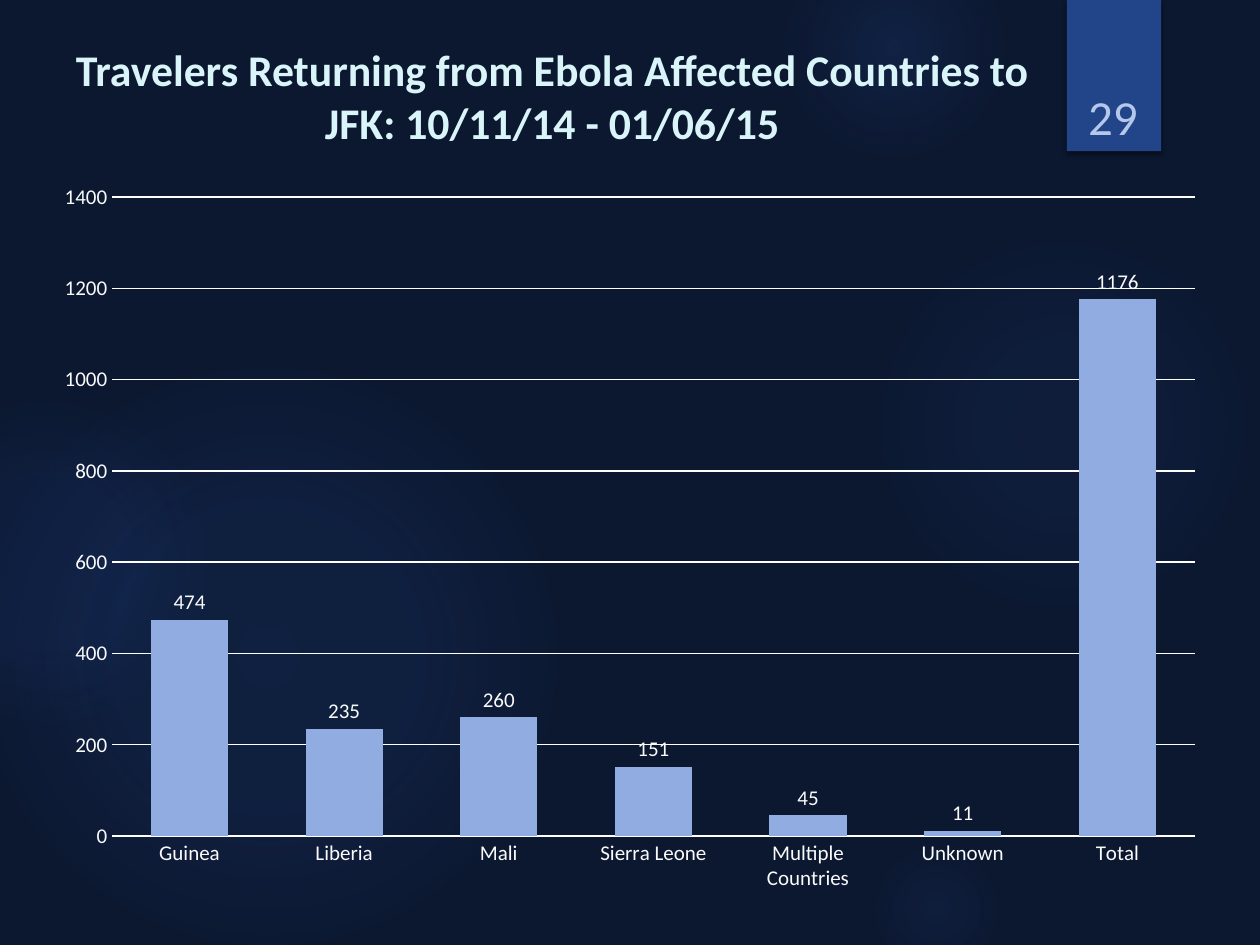
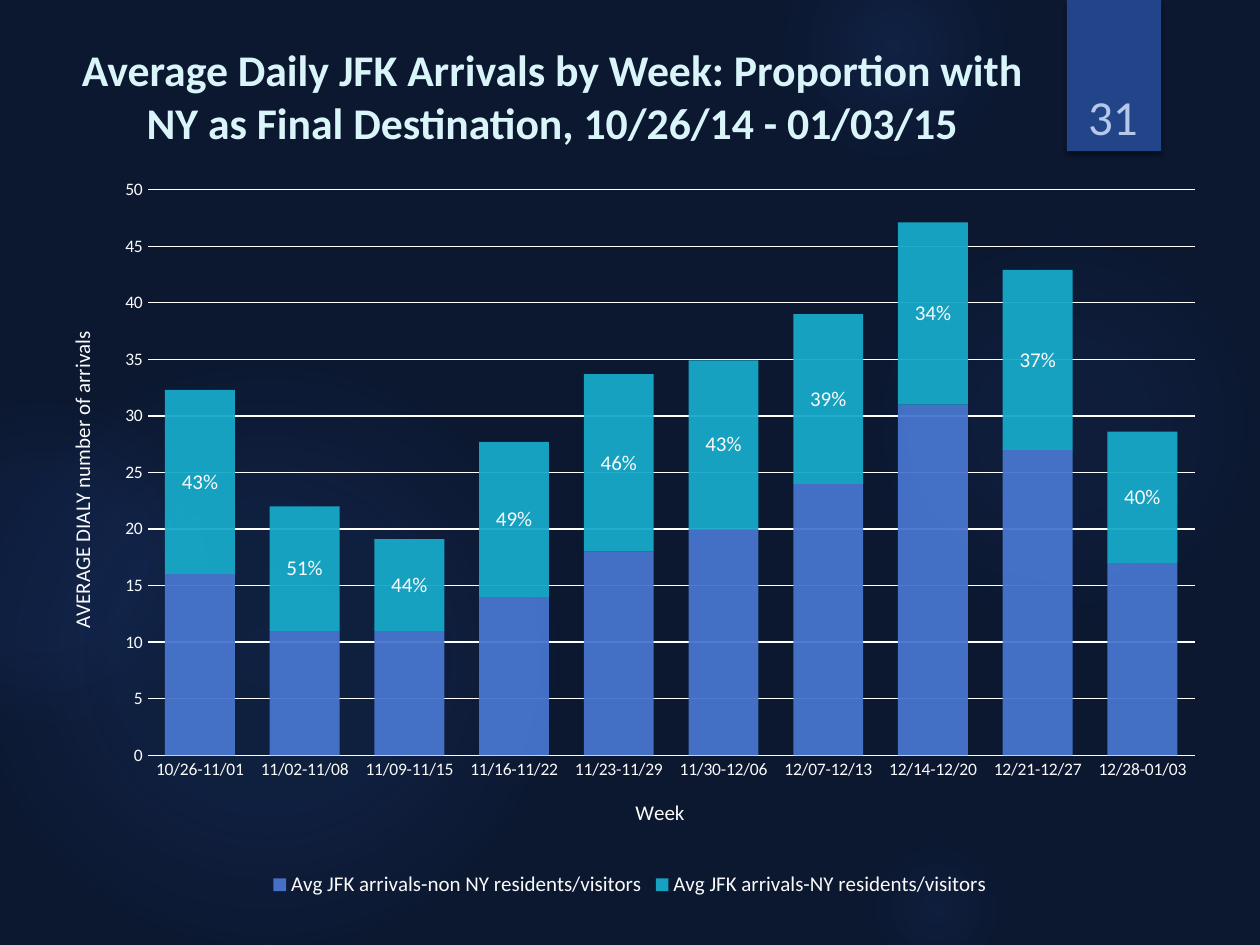
from dataclasses import dataclass

from lxml import etree
from pptx import Presentation
from pptx.chart.data import CategoryChartData
from pptx.dml.color import RGBColor
from pptx.enum.chart import XL_CHART_TYPE, XL_LABEL_POSITION, XL_LEGEND_POSITION, XL_TICK_MARK
from pptx.enum.shapes import MSO_SHAPE
from pptx.enum.text import MSO_ANCHOR, PP_ALIGN
from pptx.oxml import parse_xml
from pptx.oxml.ns import nsdecls, qn
from pptx.util import Cm, Pt

CLUSTERED = XL_CHART_TYPE.COLUMN_CLUSTERED
STACKED = XL_CHART_TYPE.COLUMN_STACKED
OUTSIDE_END = XL_LABEL_POSITION.OUTSIDE_END
LABEL_CENTER = XL_LABEL_POSITION.CENTER
LEGEND_BOTTOM = XL_LEGEND_POSITION.BOTTOM
NO_TICK = XL_TICK_MARK.NONE
OVAL, RECTANGLE = MSO_SHAPE.OVAL, MSO_SHAPE.RECTANGLE
TOP, BOTTOM = MSO_ANCHOR.TOP, MSO_ANCHOR.BOTTOM
CENTER = PP_ALIGN.CENTER


@dataclass(frozen=True)
class Theme:
    font: str = "Calibri"
    background: str = "0C1830"
    glow: str = "3060C0"
    tab: str = "22458A"
    number: str = "B5C8EB"
    title: str = "DAF5FA"
    text: str = "FAFAFA"
    grid: str = "FEFEFE"
    total_bars: str = "91ACE1"
    other_bars: str = "4775CD"
    ny_bars: str = "18A9C8"
    title_size: int = 25
    number_size: int = 28
    label_size: int = 12
    small_size: int = 10


@dataclass(frozen=True)
class Box:
    x: float
    y: float
    w: float
    h: float

    def inner(self, dx, dy, w, h):
        return Box(self.x + dx, self.y + dy, w, h)

    def lengths(self):
        return Cm(self.x), Cm(self.y), Cm(self.w), Cm(self.h)


THEME = Theme()
PAGE = Box(0, 0, 25.4, 19.05)
CHART_BOX = PAGE.inner(0.84, 3.38, 23.72, 14.81)
TAB_BOX = PAGE.inner(21.51, 0, 1.9, 3.05)

GLOWS = [
    (17.5, 4.65, 7.82, [(0, 7), (36, 6), (69, 0)]),
    (15.8, -1.27, 4.45, [(0, 14), (36, 7), (73, 0)]),
    (17.5, 16.94, 2.74, [(0, 9), (36, 5), (66, 0)]),
    (-0.43, 7.42, 11.63, [(0, 11), (36, 10), (75, 0)]),
    (-2.34, 8.05, 6.55, [(0, 8), (36, 8), (72, 0)]),
]

COUNTRY_COUNTS = {
    "Guinea": 474, "Liberia": 235, "Mali": 260, "Sierra Leone": 151,
    "Multiple Countries": 45, "Unknown": 11, "Total": 1176,
}

WEEKS = [
    ("10/26-11/01", 16, 16.3, "43%"),
    ("11/02-11/08", 11, 11, "51%"),
    ("11/09-11/15", 11, 8.1, "44%"),
    ("11/16-11/22", 14, 13.7, "49%"),
    ("11/23-11/29", 18, 15.7, "46%"),
    ("11/30-12/06", 20, 14.9, "43%"),
    ("12/07-12/13", 24, 15, "39%"),
    ("12/14-12/20", 31, 16.1, "34%"),
    ("12/21-12/27", 27, 15.9, "37%"),
    ("12/28-01/03", 17, 11.6, "40%"),
]


def style_font(font, size, color, bold=False):
    font.name = THEME.font
    font.size = Pt(size)
    font.bold = bold
    font.color.rgb = RGBColor.from_string(color)


def paint(fill, color):
    fill.solid()
    fill.fore_color.rgb = RGBColor.from_string(color)


def add_glow(slide, box, stops):
    sp = slide.shapes.add_shape(OVAL, *box.lengths())
    sp.shadow.inherit = False
    sp.fill.background()
    gs = "".join(
        f'<a:gs pos="{pos * 1000}"><a:srgbClr val="{THEME.glow}">'
        f'<a:alpha val="{alpha * 1000}"/></a:srgbClr></a:gs>'
        for pos, alpha in stops
    )
    gradient = parse_xml(
        f'<a:gradFill {nsdecls("a")} rotWithShape="1"><a:gsLst>{gs}</a:gsLst>'
        '<a:path path="circle"><a:fillToRect l="50000" t="50000" r="50000" b="50000"/></a:path>'
        '</a:gradFill>'
    )
    spPr = sp.element.spPr
    spPr.replace(spPr.find(qn("a:noFill")), gradient)
    sp.line.fill.background()
    return sp


def add_tab(slide, box):
    sp = slide.shapes.add_shape(RECTANGLE, *box.lengths())
    sp.shadow.inherit = False
    paint(sp.fill, THEME.tab)
    sp.line.fill.background()
    sp.element.spPr.find(qn("a:effectLst")).append(parse_xml(
        f'<a:outerShdw {nsdecls("a")} blurRad="{Pt(3)}" dist="{Pt(2)}" dir="5400000" '
        'algn="t" rotWithShape="0"><a:srgbClr val="000000"><a:alpha val="45000"/>'
        '</a:srgbClr></a:outerShdw>'
    ))
    return sp


def move_backdrop_to_layout(slide, layout, box):
    for placeholder in list(layout.placeholders):
        layout.placeholders.element.remove(placeholder.element)
    shapes = [add_glow(slide, box.inner(x, y, d, d), stops) for x, y, d, stops in GLOWS]
    shapes.append(add_tab(slide, TAB_BOX))
    for sp in shapes:
        layout.shapes.element.append(sp.element)


def add_text(slide, box, text, size, color, bold=False, anchor=TOP):
    tf = slide.shapes.add_textbox(*box.lengths()).text_frame
    tf.word_wrap = True
    tf.vertical_anchor = anchor
    if anchor == BOTTOM:
        tf.margin_bottom = 0
    p = tf.paragraphs[0]
    p.alignment = CENTER
    r = p.add_run()
    r.text = text
    style_font(r.font, size, color, bold)


def add_heading(slide, box, title, title_height, number):
    add_text(slide, TAB_BOX.inner(0.05, 0.81, 1.75, 2.13), number,
             THEME.number_size, THEME.number, anchor=BOTTOM)
    add_text(slide, box.inner(1.07, 0.74, 20.12, title_height), title,
             THEME.title_size, THEME.title, bold=True)


def set_plot_area(chart, x, y, w, h):
    plot_area = chart.element.find(".//" + qn("c:plotArea"))
    for old in plot_area.findall(qn("c:layout")):
        plot_area.remove(old)
    layout = etree.Element(qn("c:layout"))
    manual = etree.SubElement(layout, qn("c:manualLayout"))
    settings = [("layoutTarget", "inner"), ("xMode", "edge"), ("yMode", "edge"),
                ("x", x), ("y", y), ("w", w), ("h", h)]
    for tag, value in settings:
        etree.SubElement(manual, qn("c:" + tag)).set("val", str(value))
    plot_area.insert(0, layout)


def add_column_chart(slide, box, kind, data, colors, gap, overlap, axis_size, top, step):
    chart = slide.shapes.add_chart(kind, *box.lengths(), data).chart
    style_font(chart.font, THEME.small_size, THEME.text)
    chart.has_title = False
    chart.has_legend = False
    plot = chart.plots[0]
    plot.gap_width, plot.overlap, plot.vary_by_categories = gap, overlap, False
    for axis in (chart.category_axis, chart.value_axis):
        axis.major_tick_mark = axis.minor_tick_mark = NO_TICK
        style_font(axis.tick_labels.font, axis_size, THEME.text)
    values = chart.value_axis
    values.minimum_scale, values.maximum_scale, values.major_unit = 0, top, step
    values.tick_labels.number_format = "0"
    values.tick_labels.number_format_is_linked = False
    values.format.line.fill.background()
    for line in (values.major_gridlines.format.line, chart.category_axis.format.line):
        paint(line.fill, THEME.grid)
        line.width = Pt(0.75)
    for series, color in zip(plot.series, colors):
        paint(series.format.fill, color)
        series.invert_if_negative = False
    return chart


def label_series(series, position, number_format):
    labels = series.data_labels
    labels.show_value = True
    labels.position = position
    labels.number_format = number_format
    labels.number_format_is_linked = False
    style_font(labels.font, THEME.label_size, THEME.text)


def name_axis(axis, text):
    r = axis.axis_title.text_frame.paragraphs[0].add_run()
    r.text = text
    style_font(r.font, THEME.label_size, THEME.text)


def add_country_chart(slide, box):
    data = CategoryChartData()
    data.categories = list(COUNTRY_COUNTS)
    data.add_series("Series 1", COUNTRY_COUNTS.values())
    chart = add_column_chart(slide, box, CLUSTERED, data, [THEME.total_bars],
                             100, -24, THEME.label_size, 1400, 200)
    chart.category_axis.format.line.width = Pt(1)
    set_plot_area(chart, 0.06, 0.04, 0.92, 0.87)
    label_series(chart.plots[0].series[0], OUTSIDE_END, "0")


def add_week_chart(slide, box):
    weeks, others, new_yorkers, shares = zip(*WEEKS)
    data = CategoryChartData()
    data.categories = weeks
    data.add_series("Avg JFK arrivals-non NY residents/visitors", others)
    data.add_series("Avg JFK arrivals-NY residents/visitors", new_yorkers)
    chart = add_column_chart(slide, box, STACKED, data, [THEME.other_bars, THEME.ny_bars],
                             50, 100, THEME.small_size, 50, 5)
    set_plot_area(chart, 0.09, 0.03, 0.89, 0.77)
    name_axis(chart.category_axis, "Week")
    name_axis(chart.value_axis, "AVERAGE DIALY number of arrivals")
    chart.has_legend = True
    chart.legend.position = LEGEND_BOTTOM
    chart.legend.include_in_layout = False
    style_font(chart.legend.font, THEME.label_size, THEME.text)
    for series in chart.plots[0].series:
        color = series.format.fill._xPr.find(".//" + qn("a:srgbClr"))
        etree.SubElement(color, qn("a:alpha")).set("val", "95000")
    ny_series = chart.plots[0].series[1]
    label_series(ny_series, LABEL_CENTER, "0.0")
    for i, share in enumerate(shares):
        label = ny_series.points[i].data_label
        r = label.text_frame.paragraphs[0].add_run()
        r.text = share
        style_font(r.font, THEME.label_size, THEME.text)
        label.position = LABEL_CENTER


def main():
    prs = Presentation()
    prs.slide_width, prs.slide_height = Cm(PAGE.w), Cm(PAGE.h)
    paint(prs.slide_master.background.fill, THEME.background)
    blank = prs.slide_layouts[6]

    countries = prs.slides.add_slide(blank)
    move_backdrop_to_layout(countries, blank, PAGE)
    add_country_chart(countries, CHART_BOX)
    add_heading(countries, PAGE, "Travelers Returning from Ebola Affected Countries to "
                "JFK: 10/11/14 - 01/06/15", 2.34, "29")

    weeks = prs.slides.add_slide(blank)
    add_week_chart(weeks, CHART_BOX)
    add_heading(weeks, PAGE, "Average Daily JFK Arrivals by Week: Proportion with "
                "NY as Final Destination, 10/26/14 - 01/03/15", 3.5, "31")

    prs.save("out.pptx")


if __name__ == "__main__":
    main()
